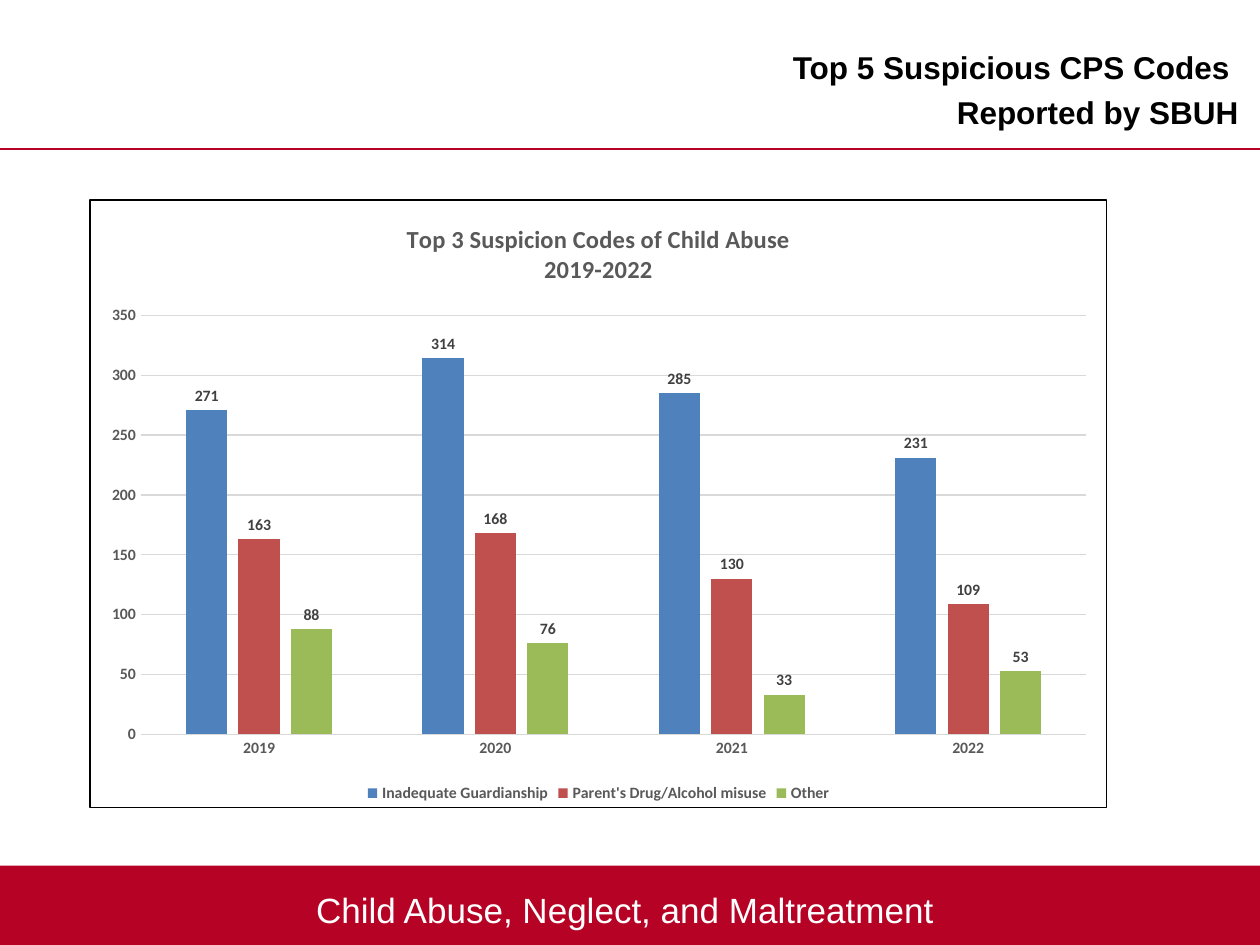
from pptx import Presentation
from pptx.chart.data import CategoryChartData
from pptx.dml.color import RGBColor
from pptx.enum.chart import XL_CHART_TYPE, XL_LABEL_POSITION, XL_LEGEND_POSITION, XL_TICK_MARK
from pptx.enum.shapes import MSO_CONNECTOR, MSO_SHAPE
from pptx.enum.text import MSO_ANCHOR, MSO_AUTO_SIZE, PP_ALIGN
from pptx.oxml import parse_xml
from pptx.oxml.ns import nsdecls, qn
from pptx.util import Inches, Pt

WIDTH, HEIGHT = Inches(10), Inches(7.5)
RED, GREY, GRID = "B60225", "595959", "D9D9D9"
YEARS = ["2019", "2020", "2021", "2022"]
SERIES = [
    ("Inadequate Guardianship", [271, 314, 285, 231], "4F81BD"),
    ("Parent's Drug/Alcohol misuse", [163, 168, 130, 109], "C0504D"),
    ("Other", [88, 76, 33, 53], "9BBB59"),
]


def color(value):
    return RGBColor.from_string(value)


def box(left, top, width, height):
    """Turn shares of the slide's size into lengths."""
    return int(left * WIDTH), int(top * HEIGHT), int(width * WIDTH), int(height * HEIGHT)


def set_font(font, size, value, bold=False, name="Calibri"):
    font.name, font.size, font.bold = name, Pt(size), bold
    font.color.rgb = color(value)


def add_heading(slide, area, lines):
    title = slide.shapes.title
    title.left, title.top, title.width, title.height = area
    tf = title.text_frame
    tf.auto_size = MSO_AUTO_SIZE.NONE
    tf.vertical_anchor = MSO_ANCHOR.TOP
    tf.margin_left = tf.margin_right = 0
    tf.text = "\n".join(lines)
    for i, p in enumerate(tf.paragraphs):
        p.alignment = PP_ALIGN.RIGHT
        p.space_before = Pt(4 if i else 0)
        set_font(p.font, 18, "000000", True, "Arial")


def add_rule(slide, y):
    line = slide.shapes.add_connector(MSO_CONNECTOR.STRAIGHT, 0, int(y * HEIGHT), WIDTH, int(y * HEIGHT))
    line.line.color.rgb = color(RED)
    line.line.width = Pt(1)
    line.element.spPr.append(parse_xml(f"<a:effectLst {nsdecls('a')}/>"))


def add_footer(slide, area, text):
    left, top, width, height = area
    band = slide.shapes.add_shape(MSO_SHAPE.RECTANGLE, *area)
    band.shadow.inherit = False
    band.fill.solid()
    band.fill.fore_color.rgb = color(RED)
    band.line.fill.background()
    tf = band.text_frame
    tf.vertical_anchor = MSO_ANCHOR.TOP
    tf.margin_top = Inches(0.18)
    tf.text = text
    p = tf.paragraphs[0]
    p.alignment = PP_ALIGN.CENTER
    set_font(p.font, 20, "FFFFFF", name="Arial")


def frame_chart(chart):
    """Give the chart area a white fill and a black border."""
    chart.element.find(qn("c:chart")).addnext(parse_xml(
        f'<c:spPr {nsdecls("c", "a")}><a:solidFill><a:srgbClr val="FFFFFF"/></a:solidFill>'
        '<a:ln w="9525"><a:solidFill><a:srgbClr val="000000"/></a:solidFill></a:ln></c:spPr>'))


def place_plot(chart, **shares):
    """Fix the inner plot area at shares of the chart's size."""
    plot_area = chart.element.find(qn("c:chart")).find(qn("c:plotArea"))
    for layout in plot_area.findall(qn("c:layout")):
        plot_area.remove(layout)
    modes = '<c:xMode val="edge"/><c:yMode val="edge"/>'
    sizes = "".join(f'<c:{key} val="{share}"/>' for key, share in shares.items())
    plot_area.insert(0, parse_xml(
        f'<c:layout {nsdecls("c")}><c:manualLayout><c:layoutTarget val="inner"/>'
        f"{modes}{sizes}</c:manualLayout></c:layout>"))


def style_axes(chart):
    for axis in (chart.category_axis, chart.value_axis):
        axis.major_tick_mark = axis.minor_tick_mark = XL_TICK_MARK.NONE
        set_font(axis.tick_labels.font, 9, GREY, True)
    chart.value_axis.format.line.fill.background()
    chart.value_axis.minimum_scale, chart.value_axis.maximum_scale = 0, 350
    chart.value_axis.major_unit = 50
    for line in (chart.category_axis.format.line, chart.value_axis.major_gridlines.format.line):
        line.color.rgb = color(GRID)
        line.width = Pt(0.75)


def style_series(plot):
    plot.gap_width, plot.overlap, plot.vary_by_categories = 219, -27, False
    for series, (_, _, fill) in zip(plot.series, SERIES):
        series.format.fill.solid()
        series.format.fill.fore_color.rgb = color(fill)
        labels = series.data_labels
        labels.show_value = True
        labels.position = XL_LABEL_POSITION.OUTSIDE_END
        set_font(labels.font, 9, "404040", True)


def add_code_chart(slide, area, title):
    data = CategoryChartData()
    data.categories = YEARS
    for name, values, _ in SERIES:
        data.add_series(name, values)
    chart = slide.shapes.add_chart(XL_CHART_TYPE.COLUMN_CLUSTERED, *area, data).chart
    set_font(chart.font, 10, "000000", True)
    chart.has_title = True
    chart.chart_title.include_in_layout = False
    chart.chart_title.text_frame.text = title
    for p in chart.chart_title.text_frame.paragraphs:
        set_font(p.font, 14, GREY, True)
    chart.has_legend = True
    chart.legend.position = XL_LEGEND_POSITION.BOTTOM
    chart.legend.include_in_layout = False
    set_font(chart.legend.font, 9, GREY, True)
    style_axes(chart)
    style_series(chart.plots[0])
    frame_chart(chart)
    place_plot(chart, x=0.05, y=0.19, w=0.93, h=0.69)


def main():
    prs = Presentation()
    prs.slide_width, prs.slide_height = WIDTH, HEIGHT
    slide = prs.slides.add_slide(prs.slide_layouts[5])
    add_footer(slide, box(0, 0.916, 1, 0.084), "Child Abuse, Neglect, and Maltreatment ")
    add_rule(slide, 0.158)
    add_heading(slide, box(0.475, 0.044, 0.508, 0.077),
                ["Top 5 Suspicious CPS Codes ", "Reported by SBUH"])
    add_code_chart(slide, box(0.071, 0.211, 0.808, 0.644),
                   "Top 3 Suspicion Codes of Child Abuse\n2019-2022")
    prs.save("out.pptx")


if __name__ == "__main__":
    main()
